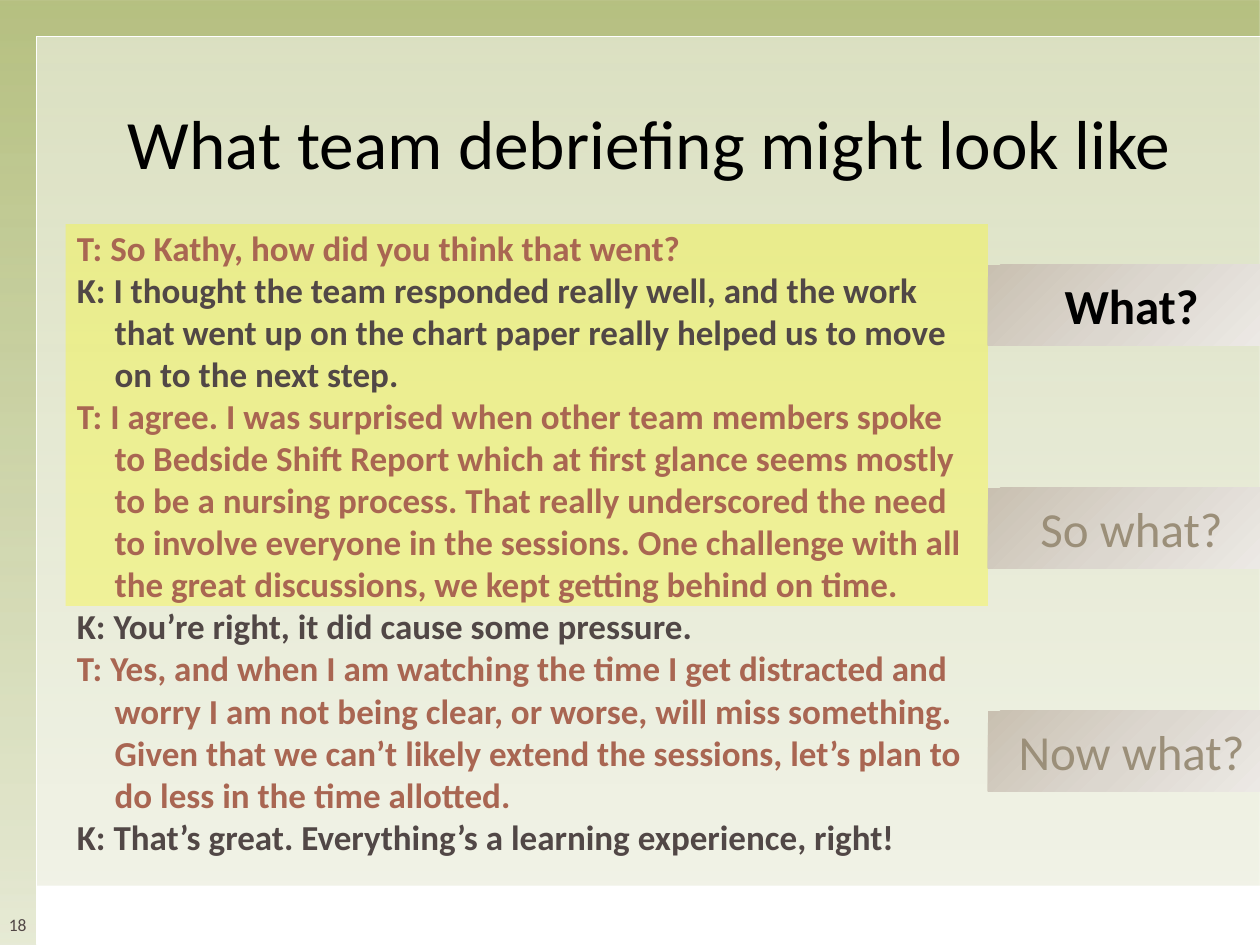
from lxml.etree import SubElement
from pptx import Presentation
from pptx.dml.color import RGBColor
from pptx.enum.shapes import MSO_SHAPE
from pptx.enum.text import MSO_ANCHOR, MSO_AUTO_SIZE, PP_ALIGN
from pptx.oxml.ns import qn
from pptx.util import Inches, Pt

COLORS = {
    "olive": "9EAC58",
    "white": "FFFFFF",
    "highlight": "FFFF00",
    "black": "000000",
    "trainer": "A96652",
    "kathy": "514746",
    "muted": "9B8F79",
    "tab_dark": "C9C0B1",
    "tab_mid": "DCD7CF",
    "tab_light": "EEEBE7",
}

DIALOGUE = [
    "T: So Kathy, how did you think that went?",
    "K: I thought the team responded really well, and the work that went up on "
    "the chart paper really helped us to move on to the next step.",
    "T: I agree. I was surprised when other team members spoke to Bedside Shift "
    "Report which at first glance seems mostly to be a nursing process. That "
    "really underscored the need to involve everyone in the sessions. One "
    "challenge with all the great discussions, we kept getting behind on time.",
    "K: You’re right, it did cause some pressure.",
    "T: Yes, and when I am watching the time I get distracted and worry I am not "
    "being clear, or worse, will miss something. Given that we can’t likely "
    "extend the sessions, let’s plan to do less in the time allotted.",
    "K: That’s great. Everything’s a learning experience, right!",
]
SPEAKER_COLORS = {"T": "trainer", "K": "kathy"}
STAGES = ["What?", "So what?", "Now what?"]
ACTIVE_STAGE = "What?"


class DebriefSlide:
    font = "Calibri"

    def __init__(self, slide):
        self.slide = slide

    def style_text(self, paragraph, text, size, color, bold=False, align=None):
        paragraph.text = text
        paragraph.alignment = align
        for run in paragraph.runs:
            run.font.name = self.font
            run.font.size = Pt(size)
            run.font.bold = bold
            run.font.color.rgb = RGBColor.from_string(COLORS[color])

    def frame(self, shape, anchor, margins=(0.1, 0.05, 0.1, 0.05), wrap=True):
        text_frame = shape.text_frame
        text_frame.auto_size = MSO_AUTO_SIZE.NONE
        text_frame.word_wrap = wrap
        text_frame.vertical_anchor = anchor
        (text_frame.margin_left, text_frame.margin_top,
         text_frame.margin_right, text_frame.margin_bottom) = map(Inches, margins)
        return text_frame

    def rectangle(self, box):
        shape = self.slide.shapes.add_shape(MSO_SHAPE.RECTANGLE, *map(Inches, box))
        shape.shadow.inherit = False
        shape.line.fill.background()
        return shape

    def panel(self, box, color, opacity=100):
        shape = self.rectangle(box)
        shape.fill.solid()
        shape.fill.fore_color.rgb = RGBColor.from_string(COLORS[color])
        if opacity < 100:
            srgb = next(shape._element.spPr.iter(qn("a:srgbClr")))
            SubElement(srgb, qn("a:alpha"), val=str(opacity * 1000))
        return shape

    def gradient_panel(self, box, stops, clockwise_angle):
        """Stops are (position %, color name, opacity %)."""
        shape = self.rectangle(box)
        shape.fill.gradient()
        shape.fill.gradient_angle = 360 - clockwise_angle
        stop_list = next(shape._element.spPr.iter(qn("a:gsLst")))
        for old_stop in list(stop_list):
            stop_list.remove(old_stop)
        for position, color, opacity in stops:
            stop = SubElement(stop_list, qn("a:gs"), pos=str(position * 1000))
            srgb = SubElement(stop, qn("a:srgbClr"), val=COLORS[color])
            if opacity < 100:
                SubElement(srgb, qn("a:alpha"), val=str(opacity * 1000))
        return shape

    def place(self, placeholder, box):
        """Position a placeholder and bring it in front of what is drawn so far."""
        (placeholder.left, placeholder.top,
         placeholder.width, placeholder.height) = map(Inches, box)
        self.slide.shapes._spTree.append(placeholder._element)

    def title(self, box, text):
        heading = self.slide.shapes.title
        self.place(heading, box)
        text_frame = self.frame(heading, MSO_ANCHOR.MIDDLE)
        self.style_text(text_frame.paragraphs[0], text, 39.6, "black", align=PP_ALIGN.CENTER)

    def dialogue(self, box, lines):
        body = self.slide.placeholders[1]
        self.place(body, box)
        text_frame = self.frame(body, MSO_ANCHOR.TOP)
        text_frame.text = "\n".join(lines)
        for paragraph, line in zip(text_frame.paragraphs, lines):
            properties = paragraph._p.get_or_add_pPr()
            properties.set("marL", str(Inches(0.3)))
            properties.set("indent", str(Inches(-0.3)))
            SubElement(properties, qn("a:buNone"))
            paragraph.space_before = Pt(0)
            self.style_text(paragraph, line, 20, SPEAKER_COLORS[line[0]], bold=True)

    def stage_tab(self, box, text, active):
        stops = [(0, "tab_dark", 100), (50, "tab_mid", 100), (100, "tab_light", 100)]
        tab = self.gradient_panel(box, stops, 45)
        text_frame = self.frame(tab, MSO_ANCHOR.MIDDLE, (0.08, 0.05, 0.08, 0.05), wrap=False)
        self.style_text(text_frame.paragraphs[0], text, 28, "black" if active else "muted",
                        bold=active, align=PP_ALIGN.CENTER)

    def page_number(self, box, number):
        label = self.slide.shapes.add_textbox(*map(Inches, box))
        text_frame = self.frame(label, MSO_ANCHOR.BOTTOM, (0, 0.04, 0, 0.08))
        self.style_text(text_frame.paragraphs[0], number, 10, "kathy", align=PP_ALIGN.CENTER)


def main():
    deck = Presentation()
    deck.slide_width, deck.slide_height = Inches(10), Inches(7.5)
    page = DebriefSlide(deck.slides.add_slide(deck.slide_layouts[1]))

    page.gradient_panel((-0.01, 0, 10.01, 7.5),
                        [(0, "olive", 75), (50, "olive", 50), (100, "olive", 25)], 90)
    content_panel = page.panel((0.29, 0.29, 9.72, 7.2), "white", 50)
    content_panel.line.color.rgb = RGBColor.from_string(COLORS["white"])
    content_panel.line.width = Pt(1)
    page.panel((0.29, 7.03, 9.72, 0.47), "white")
    page.page_number((0, 7.03, 0.28, 0.47), "18")

    page.panel((0.52, 1.78, 7.32, 3.03), "highlight", 30)
    page.title((0.58, 0.5, 9.15, 1.25), "What team debriefing might look like")
    page.dialogue((0.51, 1.75, 7.34, 5.23), DIALOGUE)
    for row, stage in enumerate(STAGES):
        page.stage_tab((7.84, 2.1 + row * 1.77, 2.28, 0.64), stage, stage == ACTIVE_STAGE)

    deck.save("out.pptx")


if __name__ == "__main__":
    main()
